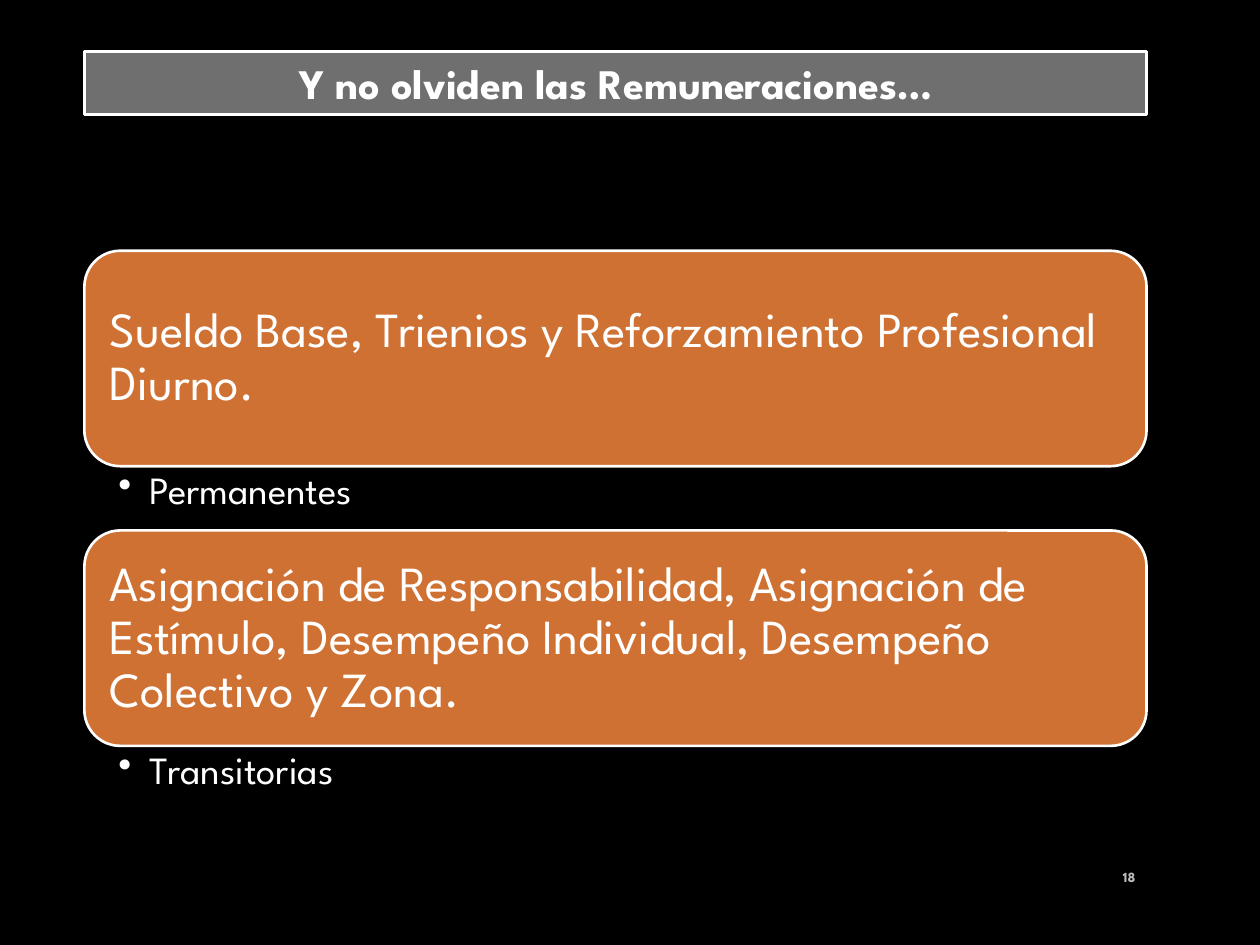
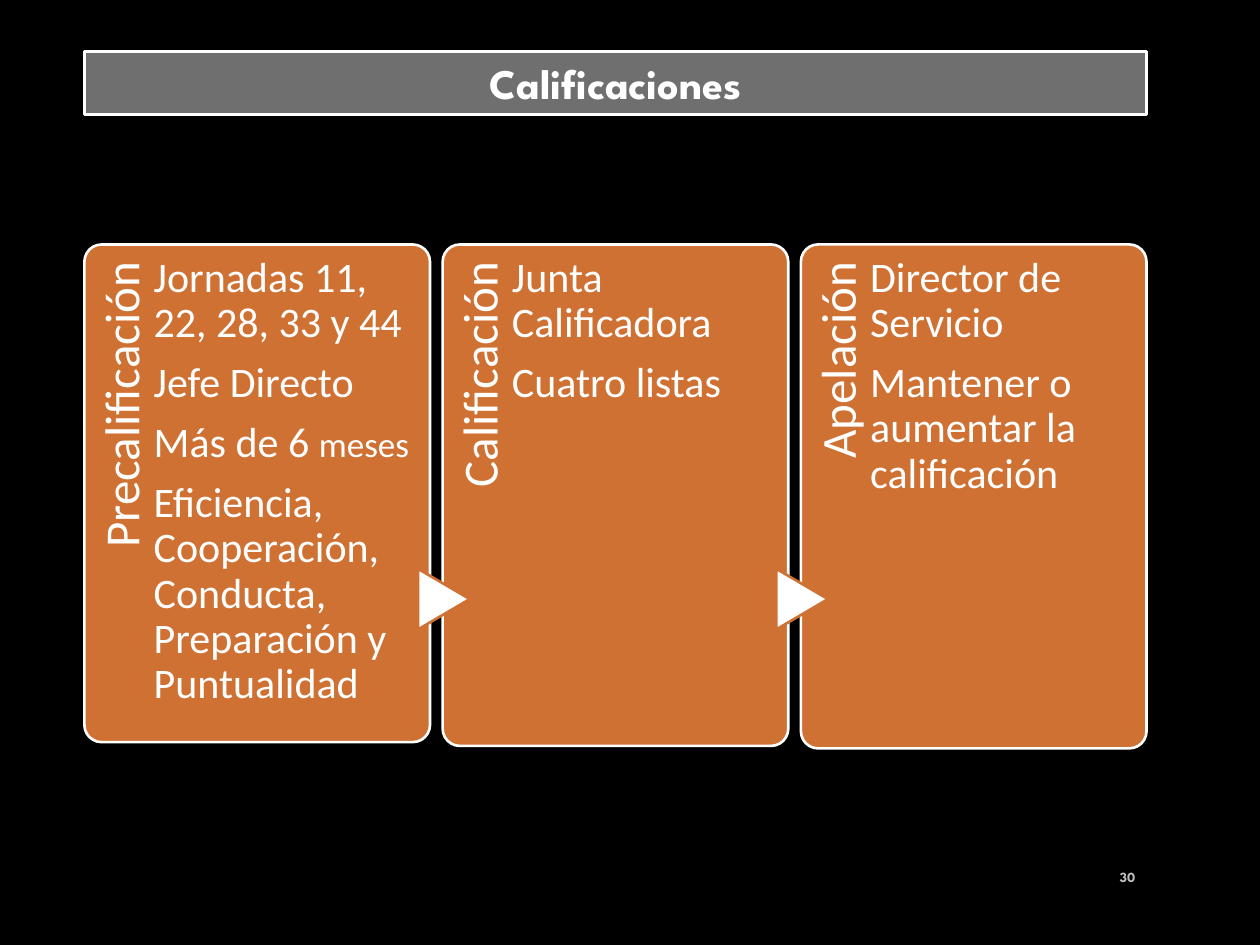
from pptx import Presentation
from pptx.dml.color import RGBColor
from pptx.enum.shapes import MSO_SHAPE
from pptx.enum.text import MSO_ANCHOR, MSO_AUTO_SIZE, PP_ALIGN
from pptx.oxml.ns import qn
from pptx.util import Inches, Pt

BLACK = RGBColor(0x00, 0x00, 0x00)
WHITE = RGBColor(0xFF, 0xFF, 0xFF)
GREY = RGBColor(0x6F, 0x6F, 0x6F)
LIGHT_GREY = RGBColor(0xBF, 0xBF, 0xBF)
ORANGE = RGBColor(0xCF, 0x71, 0x33)

RECT, ROUNDED = MSO_SHAPE.RECTANGLE, MSO_SHAPE.ROUNDED_RECTANGLE
TRIANGLE = MSO_SHAPE.FLOWCHART_EXTRACT
TOP, MIDDLE = MSO_ANCHOR.TOP, MSO_ANCHOR.MIDDLE
LEFT, CENTER, RIGHT = PP_ALIGN.LEFT, PP_ALIGN.CENTER, PP_ALIGN.RIGHT

TITLE_FONT, CARD_FONT = "League Spartan", "Calibri"
MARGIN, CONTENT_WIDTH = 0.67, 8.43
DEFAULT_INSETS = (0.1, 0.05, 0.1, 0.05)

REMUNERATIONS = [
    ("Sueldo Base, Trienios y Reforzamiento Profesional Diurno.", "Permanentes"),
    ("Asignación de Responsabilidad, Asignación de Estímulo, "
     "Desempeño Individual, Desempeño Colectivo y Zona.", "Transitorias"),
]
# A paragraph is a string, or a list of (text, size) runs.
STAGES = [
    ("Precalificación", 3.95, [
        "Jornadas 11, 22, 28, 33 y 44", "Jefe Directo",
        [("Más de 6 ", 24), ("meses", 20)],
        "Eficiencia, Cooperación, Conducta, Preparación y Puntualidad"]),
    ("Calificación", 3.98, ["Junta Calificadora", "Cuatro listas"]),
    ("Apelación", 4.0, ["Director de Servicio", "Mantener o aumentar la calificación"]),
]


def set_all(target, values):
    for name, value in values.items():
        setattr(target, name, value)


def write(shape, paragraphs, size, font=TITLE_FONT, color=WHITE, bold=False,
          align=LEFT, anchor=TOP, insets=DEFAULT_INSETS, para=None):
    """Fill a shape with paragraphs; para holds extra paragraph formats."""
    tf = shape.text_frame
    sides = ("margin_left", "margin_top", "margin_right", "margin_bottom")
    set_all(tf, {"word_wrap": True, "vertical_anchor": anchor,
                 **{side: Inches(v) for side, v in zip(sides, insets)}})
    for i, content in enumerate(paragraphs):
        p = tf.add_paragraph() if i else tf.paragraphs[0]
        set_all(p, {"alignment": align, **(para or {})})
        runs = [(content, size)] if isinstance(content, str) else content
        for text, run_size in runs:
            r = p.add_run()
            r.text = text
            set_all(r.font, {"name": font, "size": Pt(run_size), "bold": bold})
            r.font.color.rgb = color
    return tf


def spaced(size, share):
    return {"line_spacing": 0.9, "space_after": Pt(round(size * share, 1))}


def add_box(s, kind, box, fill, line, weight):
    sp = s.shapes.add_shape(kind, *map(Inches, box))
    sp.shadow.inherit = False
    sp.fill.solid()
    sp.fill.fore_color.rgb = fill
    sp.line.color.rgb = line
    sp.line.width = Pt(weight)
    return sp


def add_text(s, box, *args, **formats):
    sp = s.shapes.add_textbox(*map(Inches, box))
    write(sp, *args, **formats)
    return sp


def add_bullet(p, indent):
    pPr = p._p.get_or_add_pPr()
    pPr.set("marL", str(Inches(indent)))
    pPr.set("indent", str(-Inches(indent)))
    pPr.append(pPr.makeelement(qn("a:buChar"), {"char": "•"}))


def add_base_slide(prs, title, number):
    s = prs.slides.add_slide(prs.slide_layouts[6])
    add_text(s, (8.66, 6.76, 0.45, 0.4), [number], 8, color=LIGHT_GREY,
             bold=True, align=RIGHT, anchor=MIDDLE)
    band = add_box(s, RECT, (MARGIN, 0.41, CONTENT_WIDTH, 0.5), GREY, WHITE, 2)
    tf = write(band, [title], 24, bold=True, align=CENTER)
    tf.auto_size = MSO_AUTO_SIZE.SHAPE_TO_FIT_TEXT
    return s


def add_remuneration(s, box, concept, duration):
    """Rounded panel with a bulleted caption under it."""
    x, y, w, h = box
    panel_h, caption_h, pad = h - 0.51, 0.51, 0.08
    add_box(s, ROUNDED, (x, y, w, panel_h), ORANGE, WHITE, 1.5)
    add_text(s, (x + pad, y + pad, w - 2 * pad, panel_h - 2 * pad), [concept], 28,
             anchor=MIDDLE, insets=(0.12,) * 4, para=spaced(28, 0.35))
    caption = add_text(s, (x, y + panel_h, w, caption_h), [duration], 22,
                       insets=(0.27, 0.04, 0.22, 0.04),
                       para={"level": 1, **spaced(22, 0.2)})
    add_bullet(caption.text_frame.paragraphs[0], 0.25)


def add_stage(s, box, name, points, arrow):
    """Card with a sideways name, its points, and an arrow on its left edge."""
    x, y, w, h = box
    card = add_box(s, ROUNDED, box, ORANGE, WHITE, 1.5)
    card.adjustments[0] = 0.05
    name_w, name_h = 0.82 * h, 0.55
    label = add_text(s, (x + (name_h - name_w) / 2, y + (name_w - name_h) / 2,
                         name_w, name_h), [name], 28, font=CARD_FONT, align=RIGHT,
                     insets=(0, 0.1, 0.14, 0), para=spaced(28, 0.35))
    label.rotation = 270
    if arrow:
        tip = add_box(s, TRIANGLE, (x - 0.23, y + 2.61, 0.48, 0.41), WHITE, ORANGE, 1.5)
        tip.rotation = 90
    add_text(s, (x + name_h, y, w - 0.7, h), points, 24, font=CARD_FONT,
             insets=(0, 0.09, 0, 0), para=spaced(24, 0.35))


def remunerations_slide(prs):
    s = add_base_slide(prs, "Y no olviden las Remuneraciones…", "18")
    height = 2.22
    for i, (concept, duration) in enumerate(REMUNERATIONS):
        add_remuneration(s, (MARGIN, 1.99 + i * height, CONTENT_WIDTH, height),
                         concept, duration)


def stages_slide(prs):
    s = add_base_slide(prs, "Calificaciones", "30")
    gap = 0.1
    width = (CONTENT_WIDTH - gap * (len(STAGES) - 1)) / len(STAGES)
    for i, (name, height, points) in enumerate(STAGES):
        add_stage(s, (MARGIN + i * (width + gap), 1.94, width, height),
                  name, points, arrow=i > 0)


def main():
    prs = Presentation()
    set_all(prs, {"slide_width": Inches(10), "slide_height": Inches(7.5)})
    background = prs.slide_master.background.fill
    background.solid()
    background.fore_color.rgb = BLACK
    remunerations_slide(prs)
    stages_slide(prs)
    prs.save("out.pptx")


if __name__ == "__main__":
    main()
